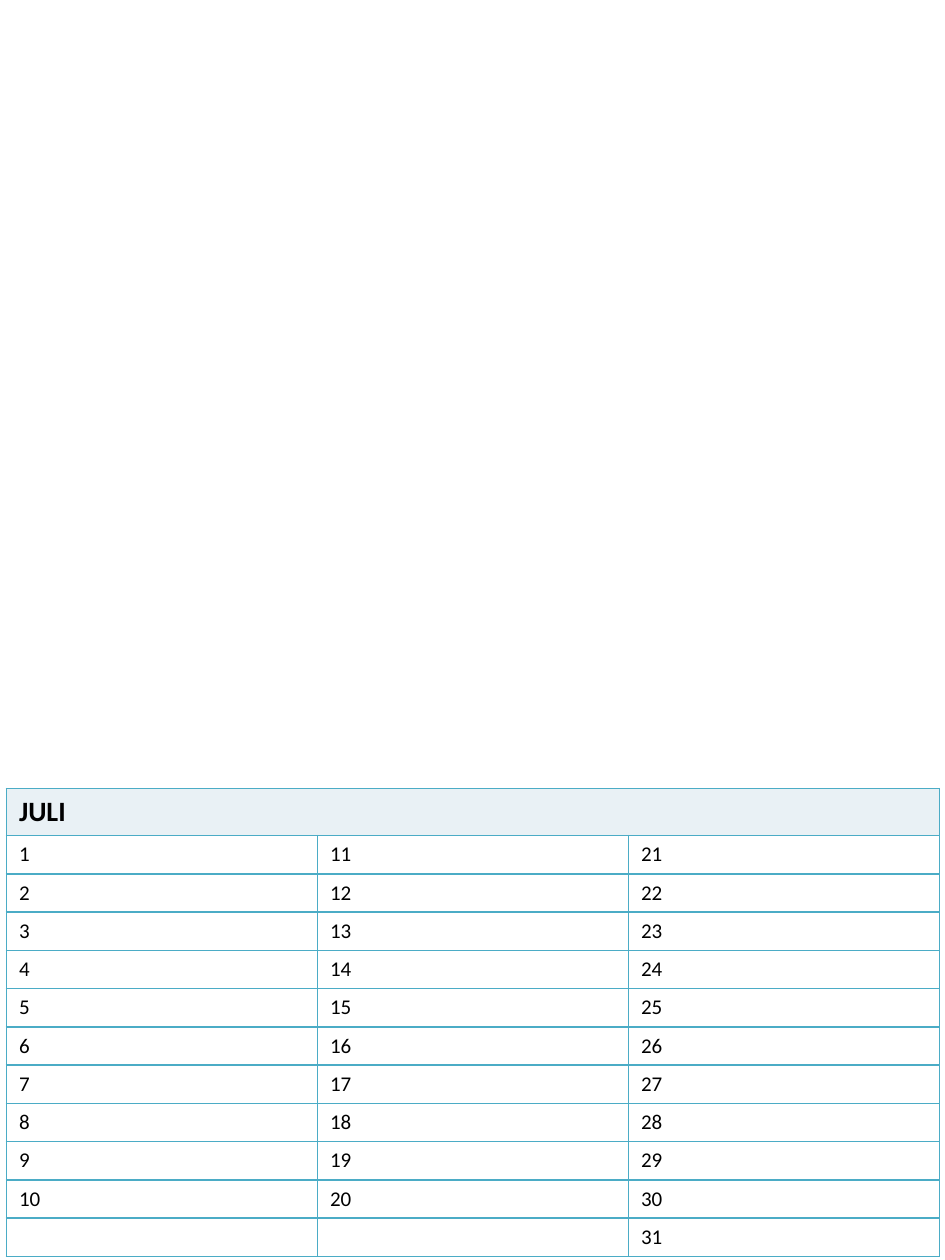
"""Build a July calendar page with three columns of days."""
from lxml.etree import SubElement
from pptx import Presentation
from pptx.dml.color import RGBColor as Rgb
from pptx.oxml import parse_xml
from pptx.oxml.ns import nsdecls, qn
from pptx.util import Cm, Pt

COLUMNS, DAY_ROWS, LAST_DAY = 3, 10, 31
COLUMN_WIDTH, TITLE_HEIGHT, DAY_HEIGHT = 6.27, 0.94, 0.77
BORDER, TITLE_FILL, DAY_FILL, INK = "4BACC6", "E9F1F5", "FFFFFF", "000000"
TITLE_FONT = {"name": "Calibri", "size": Pt(16), "bold": True}
DAY_FONT = {"name": "Calibri", "size": Pt(12), "bold": False}


def color(value):
    """Turn a hex string into a colour."""
    return Rgb.from_string(value)


def add_borders(cell):
    """Draw a thin line on all four sides of a cell."""
    properties = cell._tc.get_or_add_tcPr()
    for side in ("lnL", "lnR", "lnT", "lnB"):
        properties.append(parse_xml(
            f'<a:{side} {nsdecls("a")} w="{Pt(1)}"><a:solidFill>'
            f'<a:srgbClr val="{BORDER}"/></a:solidFill></a:{side}>'))


def write_text(cell, text, font):
    """Write text in a cell, or give an empty cell its text size."""
    para = cell.text_frame.paragraphs[0]
    if not text:
        SubElement(para._p, qn("a:endParaRPr"), sz=str(int(font["size"].pt * 100)))
        return
    span = para.add_run()
    span.text = text
    for name, value in font.items():
        setattr(span.font, name, value)
    span.font.color.rgb = color(INK)


def style_cell(cell, fill):
    """Give a cell its borders and fill."""
    add_borders(cell)
    cell.fill.solid()
    cell.fill.fore_color.rgb = color(fill)


def day_label(row, column):
    """Return the day for a place in the grid, with the extra day last."""
    if row <= DAY_ROWS:
        return str(column * DAY_ROWS + row)
    return str(LAST_DAY) if column == COLUMNS - 1 else ""


def add_calendar(page, title):
    """Add the month table to the foot of the page."""
    row_count = DAY_ROWS + 2
    height = TITLE_HEIGHT + DAY_HEIGHT * (row_count - 1)
    table = page.shapes.add_table(
        row_count, COLUMNS, Cm(0.13), Cm(15.9),
        Cm(COLUMN_WIDTH * COLUMNS), Cm(height)).table
    for column in table.columns:
        column.width = Cm(COLUMN_WIDTH)
    for index, row in enumerate(table.rows):
        row.height = Cm(DAY_HEIGHT if index else TITLE_HEIGHT)
        for column, cell in enumerate(row.cells):
            style_cell(cell, DAY_FILL if index else TITLE_FILL)
            if index:
                write_text(cell, day_label(index, column), DAY_FONT)
    heading = table.cell(0, 0)
    heading.merge(table.cell(0, COLUMNS - 1))
    write_text(heading, title, TITLE_FONT)


def main():
    """Build and save the deck."""
    deck = Presentation()
    deck.slide_width, deck.slide_height = Cm(19.05), Cm(25.4)
    page = deck.slides.add_slide(deck.slide_layouts[6])
    add_calendar(page, "JULI")
    deck.save("out.pptx")


if __name__ == "__main__":
    main()
